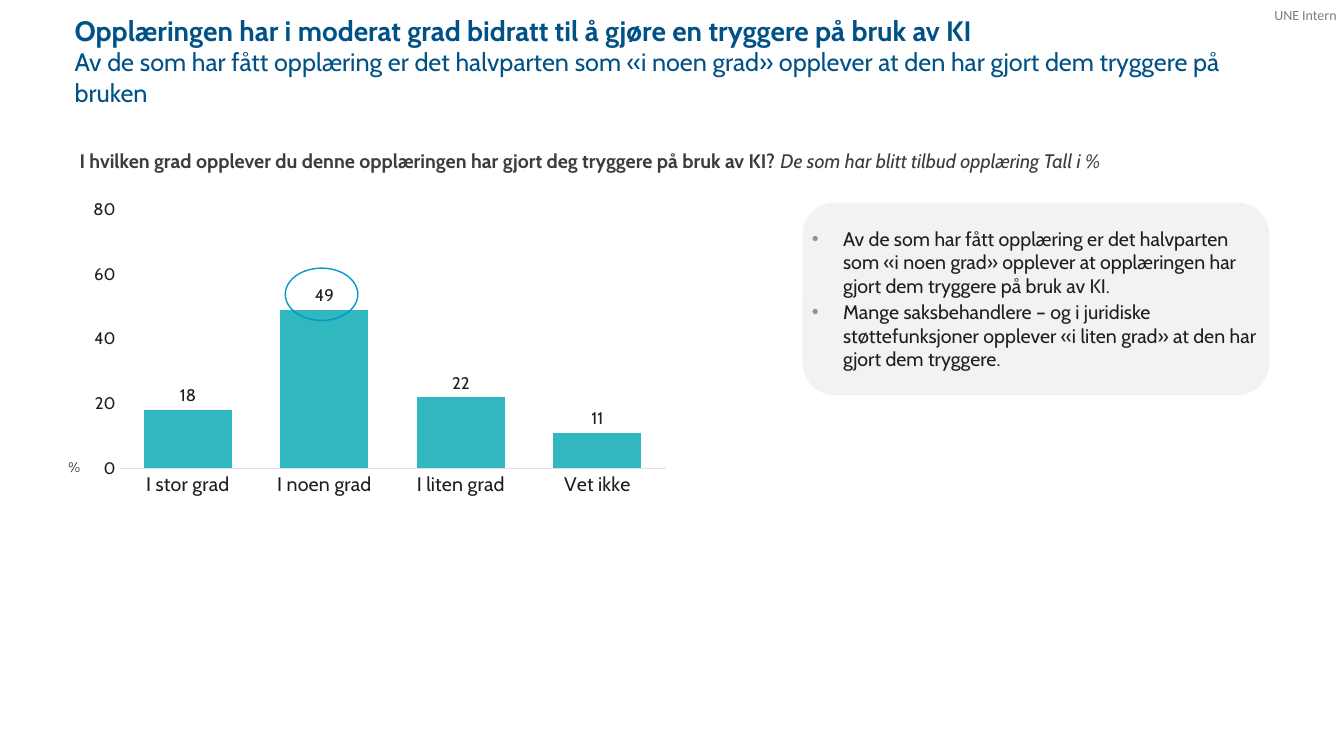
"""Build the slide on how training affected confidence in using AI."""
from dataclasses import dataclass

from lxml.etree import SubElement
from pptx import Presentation
from pptx.chart.data import CategoryChartData
from pptx.dml.color import RGBColor
from pptx.enum.chart import XL_CHART_TYPE, XL_LABEL_POSITION, XL_TICK_MARK
from pptx.enum.shapes import MSO_SHAPE
from pptx.enum.text import MSO_ANCHOR, MSO_AUTO_SIZE, PP_ALIGN
from pptx.oxml.ns import qn
from pptx.oxml.xmlchemy import OxmlElement
from pptx.util import Inches, Pt

WIDTH, HEIGHT = Inches(13.33), Inches(7.5)


@dataclass(frozen=True)
class Theme:
    """Colours, fonts and type sizes of the slide."""
    blue: str = "005187"
    accent: str = "009ACB"
    teal: str = "30B7C0"
    ink: str = "1E1E1E"
    text: str = "3C3C3C"
    marking: str = "7F7F7F"
    bullet: str = "939393"
    axis: str = "E2E2E2"
    panel: str = "F2F2F2"
    font: str = "Cabin"
    marking_font: str = "Calibri"
    title: int = 20
    subtitle: int = 18
    body: int = 14
    value: int = 12
    small: int = 10


@dataclass(frozen=True)
class Box:
    """A frame in percent of the slide's width and height."""
    x: float
    y: float
    w: float
    h: float

    def frame(self) -> tuple[int, int, int, int]:
        """Return left, top, width and height as lengths."""
        return (int(WIDTH * self.x / 100), int(HEIGHT * self.y / 100),
                int(WIDTH * self.w / 100), int(HEIGHT * self.h / 100))


@dataclass(frozen=True)
class Span:
    """A piece of text in one style."""
    text: str
    size: int
    color: str
    bold: bool = False
    italic: bool = False
    font: str = "Cabin"


@dataclass(frozen=True)
class Label:
    """A one-line text box."""
    box: Box
    spans: tuple[Span, ...]
    inset: float = 0.1


T = Theme()
TITLE_BOX = Box(4.8, 1.07, 89.65, 9.07)
CHART_BOX = Box(5.78, 24.67, 44.64, 43.87)
RING_BOX = Box(21.23, 35.47, 5.4, 6.93)
PANEL_BOX = Box(59.71, 26.8, 34.73, 25.47)
PLOT = {"x": 0.07, "y": 0.07, "w": 0.91, "h": 0.78}

TITLE = (
    Span("Opplæringen har i moderat grad bidratt til å gjøre en tryggere på bruk av KI",
         T.title, T.blue, bold=True),
    Span("Av de som har fått opplæring er det halvparten som «i noen grad» opplever "
         "at den har gjort dem tryggere på bruken", T.subtitle, T.blue),
)
LABELS = (
    Label(Box(94.82, 0.93, 4.88, 2.27),
          (Span("UNE Intern", T.small, T.marking, font=T.marking_font),), inset=0),
    Label(Box(5.18, 19.07, 79.14, 4.53), (
        Span("I hvilken grad opplever du denne opplæringen har gjort deg tryggere "
             "på bruk av KI? ", T.body, T.text, bold=True),
        Span("De som har blitt tilbud opplæring Tall i %", T.body, T.text, italic=True))),
    Label(Box(4.35, 60, 2.25, 3.6), (Span("%", T.small, T.text),)),
)
FINDINGS = (
    "Av de som har fått opplæring er det halvparten som «i noen grad» opplever at "
    "opplæringen har gjort dem tryggere på bruk av KI.",
    "Mange saksbehandlere – og i juridiske støttefunksjoner opplever «i liten grad» "
    "at den har gjort dem tryggere.",
)
ANSWERS = {"I stor grad": 18, "I noen grad": 49, "I liten grad": 22, "Vet ikke": 11}


def style(font, size: int, color: str, name: str = T.font) -> None:
    """Set size, colour and typeface of a font."""
    font.size, font.name = Pt(size), name
    font.color.rgb = RGBColor.from_string(color)


def add_span(p, span: Span) -> None:
    """Append a styled run to a paragraph."""
    r = p.add_run()
    r.text = span.text
    style(r.font, span.size, span.color, span.font)
    r.font.bold, r.font.italic = span.bold, span.italic


def set_insets(tf, x: float, y: float) -> None:
    """Set the side and the top and bottom insets in inches."""
    tf.margin_left = tf.margin_right = Inches(x)
    tf.margin_top = tf.margin_bottom = Inches(y)


def set_title(s) -> None:
    """Place the title placeholder and fill its two paragraphs."""
    sp = s.shapes.title
    sp.left, sp.top, sp.width, sp.height = TITLE_BOX.frame()
    tf = sp.text_frame
    tf.auto_size, tf.word_wrap = MSO_AUTO_SIZE.NONE, True
    tf.vertical_anchor = MSO_ANCHOR.TOP
    for i, span in enumerate(TITLE):
        p = tf.add_paragraph() if i else tf.paragraphs[0]
        p.alignment, p.space_before = PP_ALIGN.LEFT, Pt(0)
        add_span(p, span)


def add_label(s, label: Label) -> None:
    """Add a text box on one line."""
    tf = s.shapes.add_textbox(*label.box.frame()).text_frame
    tf.word_wrap, tf.auto_size = False, MSO_AUTO_SIZE.SHAPE_TO_FIT_TEXT
    set_insets(tf, label.inset, label.inset / 2)
    for span in label.spans:
        add_span(tf.paragraphs[0], span)


def place_plot(chart) -> None:
    """Fix the inner plot area as shares of the chart."""
    area = chart._chartSpace.chart.plotArea
    for old in area.findall(qn("c:layout")):
        area.remove(old)
    layout = OxmlElement("c:layout")
    area.insert(0, layout)
    manual = SubElement(layout, qn("c:manualLayout"))
    settings = {"layoutTarget": "inner", "xMode": "edge", "yMode": "edge", **PLOT}
    for tag, value in settings.items():
        SubElement(manual, qn(f"c:{tag}")).set("val", str(value))


def add_answers(s) -> None:
    """Add the column chart of answers."""
    data = CategoryChartData()
    data.categories = list(ANSWERS)
    data.add_series("Andel", list(ANSWERS.values()))
    chart = s.shapes.add_chart(XL_CHART_TYPE.COLUMN_CLUSTERED, *CHART_BOX.frame(), data).chart
    chart.has_legend = chart.has_title = False
    style(chart.font, T.small, T.ink)
    for axis, size in ((chart.category_axis, T.body), (chart.value_axis, T.value)):
        axis.has_major_gridlines = False
        axis.major_tick_mark = axis.minor_tick_mark = XL_TICK_MARK.NONE
        style(axis.tick_labels.font, size, T.ink)
    line = chart.category_axis.format.line
    line.color.rgb, line.width = RGBColor.from_string(T.axis), Pt(0.75)
    scale = chart.value_axis
    scale.format.line.fill.background()
    scale.minimum_scale, scale.maximum_scale, scale.major_unit = 0, 80, 20
    plot = chart.plots[0]
    plot.gap_width, plot.vary_by_categories = 55, False
    fill = plot.series[0].format.fill
    fill.solid()
    fill.fore_color.rgb = RGBColor.from_string(T.teal)
    plot.has_data_labels = True
    labels = plot.data_labels
    labels.show_value, labels.position = True, XL_LABEL_POSITION.OUTSIDE_END
    style(labels.font, T.value, T.ink)
    place_plot(chart)


def add_ring(s) -> None:
    """Add the ring around the highest value."""
    sp = s.shapes.add_shape(MSO_SHAPE.OVAL, *RING_BOX.frame())
    sp.shadow.inherit = False
    sp.fill.background()
    sp.line.color.rgb, sp.line.width = RGBColor.from_string(T.accent), Pt(1)


def add_bullet(p) -> None:
    """Give a paragraph a hanging grey bullet."""
    pPr = p._p.get_or_add_pPr()
    pPr.set("marL", str(Inches(0.31)))
    pPr.set("indent", str(Inches(-0.31)))
    color = SubElement(pPr, qn("a:buClr"))
    SubElement(color, qn("a:srgbClr")).set("val", T.bullet)
    SubElement(pPr, qn("a:buFont")).set("typeface", "Arial")
    SubElement(pPr, qn("a:buChar")).set("char", "•")


def add_findings(s) -> None:
    """Add the rounded panel with the findings."""
    sp = s.shapes.add_shape(MSO_SHAPE.ROUNDED_RECTANGLE, *PANEL_BOX.frame())
    sp.shadow.inherit = False
    sp.fill.solid()
    sp.fill.fore_color.rgb = RGBColor.from_string(T.panel)
    sp.line.fill.background()
    tf = sp.text_frame
    tf.word_wrap, tf.vertical_anchor = True, MSO_ANCHOR.MIDDLE
    set_insets(tf, 0, 0)
    for i, finding in enumerate(FINDINGS):
        p = tf.add_paragraph() if i else tf.paragraphs[0]
        add_bullet(p)
        p.alignment, p.space_before = PP_ALIGN.LEFT, Pt(2 if i else 0)
        add_span(p, Span(finding, T.body, T.ink))


def main() -> None:
    """Build and save the presentation."""
    prs = Presentation()
    prs.slide_width, prs.slide_height = WIDTH, HEIGHT
    s = prs.slides.add_slide(prs.slide_layouts[5])
    set_title(s)
    add_answers(s)
    for label in LABELS:
        add_label(s, label)
    add_ring(s)
    add_findings(s)
    prs.save("out.pptx")


if __name__ == "__main__":
    main()
